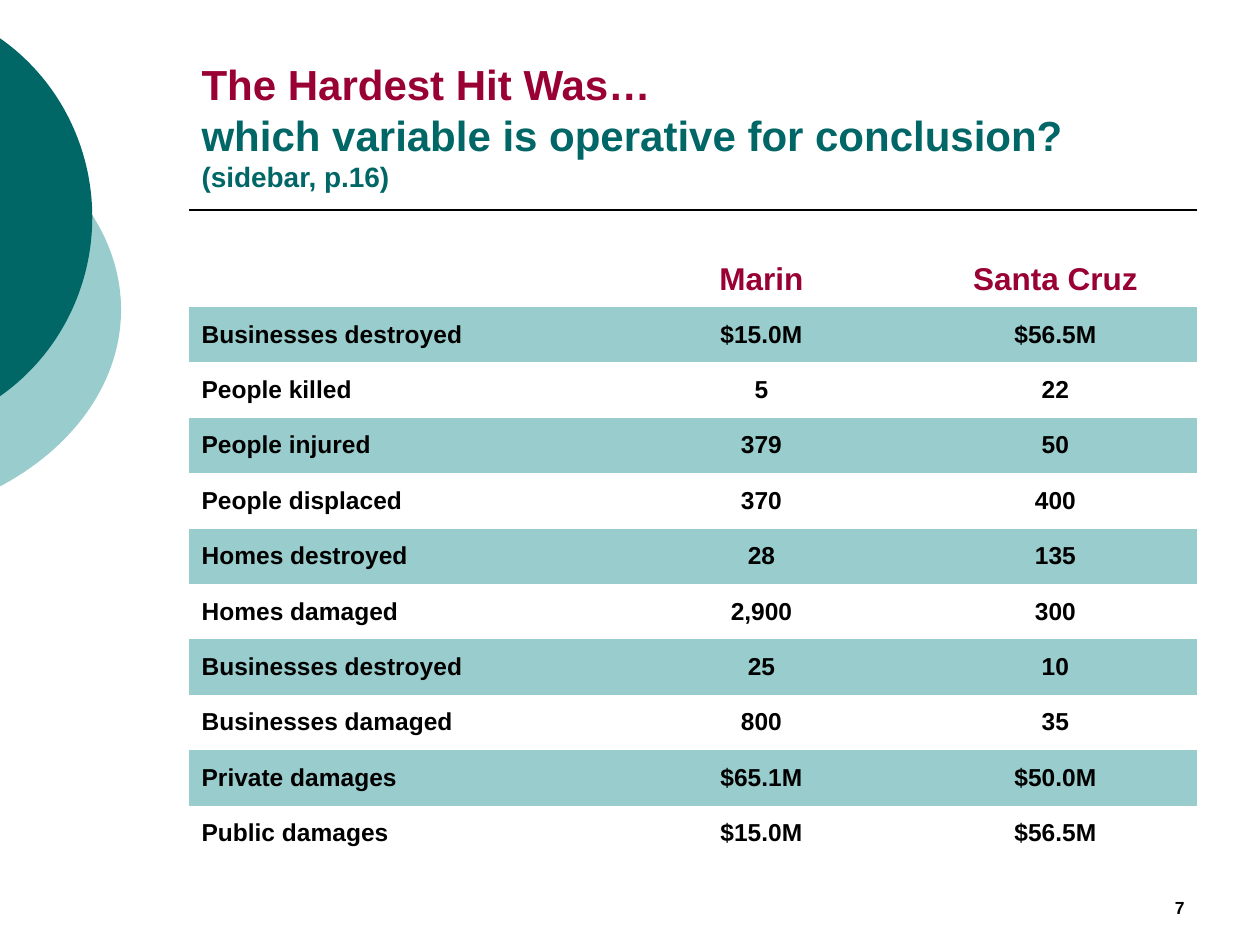
from dataclasses import dataclass

from lxml import etree
from pptx import Presentation
from pptx import util as u
from pptx.dml.color import RGBColor
from pptx.enum import shapes, text


@dataclass(frozen=True)
class Theme:
    font: str = "Arial"
    red: RGBColor = RGBColor(0x99, 0x00, 0x33)
    teal: RGBColor = RGBColor(0x00, 0x66, 0x66)
    pale: RGBColor = RGBColor(0x99, 0xCC, 0xCC)
    black: RGBColor = RGBColor(0, 0, 0)
    title: u.Pt = u.Pt(24)
    note: u.Pt = u.Pt(16)
    head: u.Pt = u.Pt(18)
    cell: u.Pt = u.Pt(14)
    number: u.Pt = u.Pt(10)


T = Theme()
LEFT, WIDTH = u.Cm(3.81), u.Cm(20.32)


def set_font(p, size, color):
    p.font.name, p.font.bold = T.font, True
    p.font.size, p.font.color.rgb = size, color


prs = Presentation()
prs.slide_width, prs.slide_height = u.Cm(25.4), u.Cm(19.05)
s = prs.slides.add_slide(prs.slide_layouts[5])

# Ovals that run over the left edge
ovals = [
    (T.pale, (-8.99, 1.9, 11.43, 8.69)),
    (T.teal, (-6.73, 0, 8.59, 8.76)),
]
for color, box in ovals:
    sp = s.shapes.add_shape(shapes.MSO_SHAPE.OVAL, *map(u.Cm, box))
    sp.shadow.inherit = False
    sp.fill.solid()
    sp.fill.fore_color.rgb = color
    sp.line.fill.background()

# Rule under the title
y = u.Cm(4.24)
rule = s.shapes.add_connector(shapes.MSO_CONNECTOR.STRAIGHT, LEFT, y, LEFT + WIDTH, y)
rule.line.color.rgb, rule.line.width = T.black, u.Pt(1)
etree.SubElement(
    rule._element.spPr, "{http://schemas.openxmlformats.org/drawingml/2006/main}effectLst"
)

# Title
sp = s.shapes.title
sp.left, sp.top, sp.width, sp.height = LEFT, u.Cm(0.84), WIDTH, u.Cm(3.18)
tf = sp.text_frame
tf.auto_size = text.MSO_AUTO_SIZE.NONE
tf.vertical_anchor = text.MSO_ANCHOR.BOTTOM
p = tf.paragraphs[0]
p.alignment = text.PP_ALIGN.LEFT
set_font(p, T.title, T.teal)
lines = [
    ("The Hardest Hit Was…", T.title, T.red),
    ("which variable is operative for conclusion?", T.title, T.teal),
    ("(sidebar, p.16)", T.note, T.teal),
]
for i, (line, size, color) in enumerate(lines):
    if i:
        p.add_line_break()
    r = p.add_run()
    r.text = line
    r.font.size, r.font.color.rgb = size, color

# Damage table
rows = [
    ("", "Marin", "Santa Cruz"),
    ("Businesses destroyed", "$15.0M", "$56.5M"),
    ("People killed", "5", "22"),
    ("People injured", "379", "50"),
    ("People displaced", "370", "400"),
    ("Homes destroyed", "28", "135"),
    ("Homes damaged", "2,900", "300"),
    ("Businesses destroyed", "25", "10"),
    ("Businesses damaged", "800", "35"),
    ("Private damages", "$65.1M", "$50.0M"),
    ("Public damages", "$15.0M", "$56.5M"),
]
table = s.shapes.add_table(len(rows), 3, LEFT, u.Cm(5.07), WIDTH, u.Cm(12.29)).table
table.first_row = table.horz_banding = False
# "No Style, No Grid" keeps the bands free of cell borders
table._tbl.tblPr[0].text = "{2D5ABB26-0587-4C30-8999-92F81FD0307C}"
for col, width in zip(table.columns, (8.47, 6.14, 5.71)):
    col.width = u.Cm(width)
for i, row in enumerate(rows):
    for j, value in enumerate(row):
        cell = table.cell(i, j)
        cell.vertical_anchor = text.MSO_ANCHOR.MIDDLE
        if i % 2:
            cell.fill.solid()
            cell.fill.fore_color.rgb = T.pale
        else:
            cell.fill.background()
        p = cell.text_frame.paragraphs[0]
        if value:
            p.text = value
        p.alignment = text.PP_ALIGN.CENTER if j else text.PP_ALIGN.LEFT
        set_font(p, *((T.cell, T.black) if i else (T.head, T.red)))

# Slide number
sp = s.shapes.add_textbox(u.Cm(18.21), u.Cm(17.36), u.Cm(5.92), u.Cm(1.27))
tf = sp.text_frame
tf.word_wrap = True
tf.vertical_anchor = text.MSO_ANCHOR.BOTTOM
p = tf.paragraphs[0]
p.text = "7"
p.alignment = text.PP_ALIGN.RIGHT
set_font(p, T.number, T.black)

prs.save("out.pptx")
